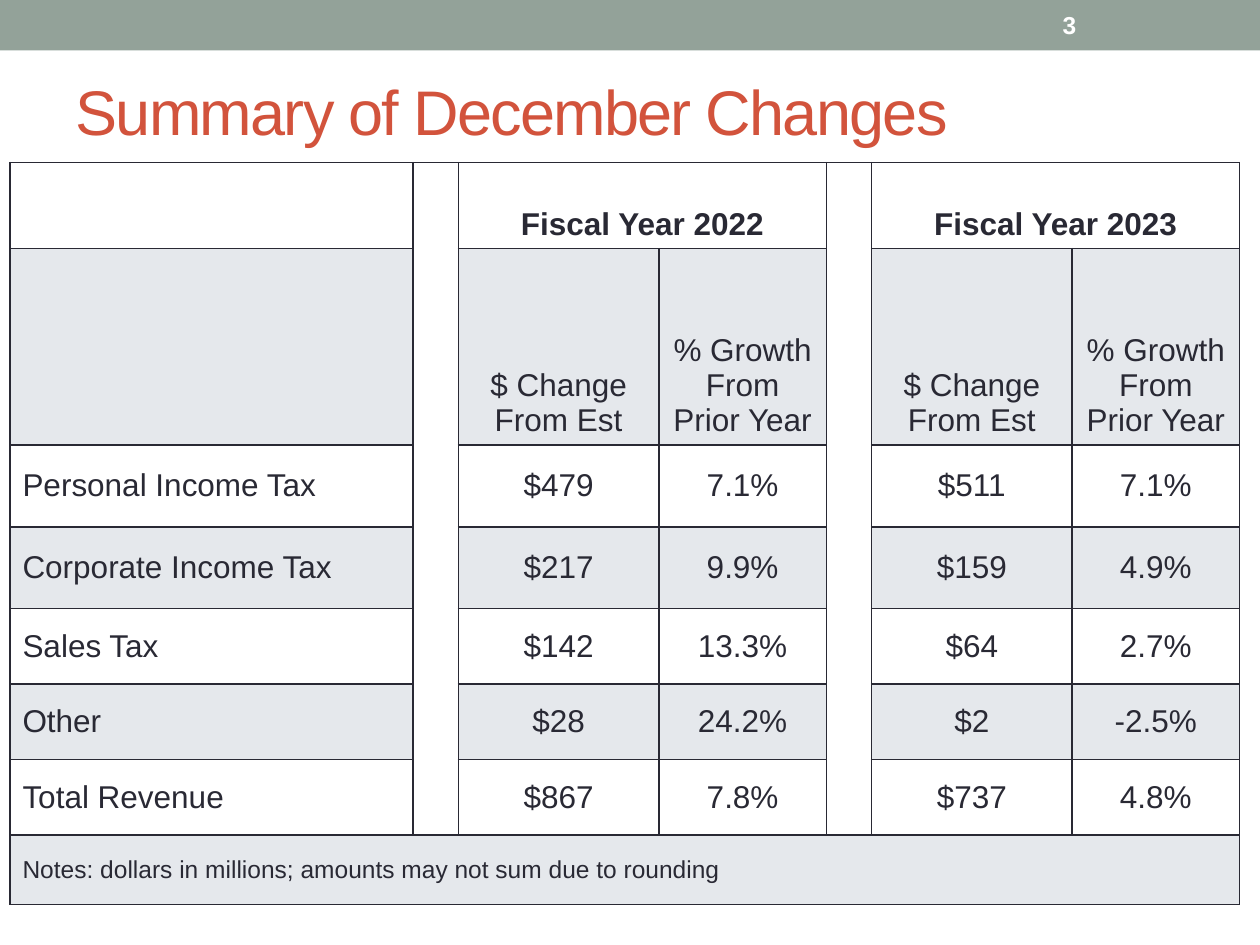
from dataclasses import dataclass

from lxml.etree import SubElement
from pptx import Presentation
from pptx.dml.color import RGBColor
from pptx.enum.shapes import MSO_SHAPE as Shape
from pptx.enum.text import MSO_ANCHOR as Anchor, MSO_AUTO_SIZE as AutoSize, PP_ALIGN as Align
from pptx.oxml import parse_xml
from pptx.oxml.ns import nsdecls, qn
from pptx.util import Cm, Pt


@dataclass(frozen=True)
class Theme:
    font: str = "Arial"
    ink: str = "292934"
    accent: str = "D2533C"
    band: str = "93A299"
    stripe: str = "808DA0"
    light: str = "FFFFFF"
    title_size: int = 36
    table_size: int = 18
    small_size: int = 14


THEME = Theme()
COLUMNS = [8.13, 0.91, 4.04, 3.38, 0.91, 4.04, 3.38]
ROWS = [1.73, 3.96, 1.65, 1.65, 1.52, 1.52, 1.52, 1.4]
SPACERS = (1, 4)
YEARS = {2: "Fiscal Year 2022", 5: "Fiscal Year 2023"}
MEASURES = ["$ Change From Est", "% Growth From Prior Year"]
REVENUES = [
    ["", *MEASURES, *MEASURES],
    ["Personal Income Tax", "$479", "7.1%", "$511", "7.1%"],
    ["Corporate Income Tax", "$217", "9.9%", "$159", "4.9%"],
    ["Sales Tax", "$142", "13.3%", "$64", "2.7%"],
    ["Other", "$28", "24.2%", "$2", "-2.5%"],
    ["Total Revenue", "$867", "7.8%", "$737", "4.8%"],
]
NOTE = "Notes: dollars in millions; amounts may not sum due to rounding"


def write(frame, text, size, color, bold=False, align=Align.LEFT):
    frame.text = text
    para = frame.paragraphs[0]
    para.alignment = align
    for target in (para, *para.runs):
        font = target.font
        font.name, font.size, font.bold = THEME.font, Pt(size), bold
        font.color.rgb = RGBColor.from_string(color)


def add_band(slide, width):
    band = slide.shapes.add_shape(Shape.RECTANGLE, 0, 0, width, Cm(1.02))
    band.shadow.inherit = False
    band.fill.solid()
    band.fill.fore_color.rgb = RGBColor.from_string(THEME.band)
    band.line.fill.background()


def add_page_number(slide, number):
    box = slide.shapes.add_textbox(Cm(21.17), Cm(0.05), Cm(2.96), Cm(0.91))
    box.text_frame.word_wrap = True
    box.text_frame.vertical_anchor = Anchor.MIDDLE
    write(box.text_frame, number, THEME.small_size, THEME.light, bold=True)


def set_title(slide, text):
    title = slide.shapes.title
    title.left, title.top, title.width, title.height = Cm(1.27), Cm(1.27), Cm(23.29), Cm(1.9)
    frame = title.text_frame
    frame.auto_size = AutoSize.NONE
    frame.vertical_anchor = Anchor.MIDDLE
    write(frame, text, THEME.title_size, THEME.accent)
    frame.paragraphs[0].runs[0].font._element.set("spc", "-100")


def style_cell(cell, striped):
    """Give the cell its fill and a thin line on all four sides."""
    if striped:
        cell.fill.solid()
        cell.fill.fore_color.rgb = RGBColor.from_string(THEME.stripe)
        color = cell.fill._xPr.find(".//" + qn("a:srgbClr"))
        SubElement(color, qn("a:alpha"), val="20000")
    else:
        cell.fill.background()
    properties = cell._tc.get_or_add_tcPr()
    for index, side in enumerate("LRTB"):
        properties.insert(index, parse_xml(
            f'<a:ln{side} {nsdecls("a")} w="12700"><a:solidFill>'
            f'<a:srgbClr val="{THEME.ink}"/></a:solidFill></a:ln{side}>'))


def fill_cell(cell, text, anchor=Anchor.MIDDLE, size=THEME.table_size, **style):
    cell.vertical_anchor = anchor
    write(cell.text_frame, text, size, THEME.ink, **style)


def add_revenue_table(slide):
    table = slide.shapes.add_table(len(ROWS), len(COLUMNS), Cm(0.2), Cm(3.28),
                                   Cm(sum(COLUMNS)), Cm(sum(ROWS))).table
    for column, width in zip(table.columns, COLUMNS):
        column.width = Cm(width)
    for row, height in zip(table.rows, ROWS):
        row.height = Cm(height)

    last_row, last_column = len(ROWS) - 1, len(COLUMNS) - 1
    for r in range(len(ROWS)):
        for c in range(len(COLUMNS)):
            spacer = c in SPACERS and r < last_row
            style_cell(table.cell(r, c), striped=r % 2 == 1 and not spacer)

    for c in SPACERS:
        table.cell(0, c).merge(table.cell(last_row - 1, c))
    for c, year in YEARS.items():
        table.cell(0, c).merge(table.cell(0, c + 1))
        fill_cell(table.cell(0, c), year, Anchor.BOTTOM, bold=True, align=Align.CENTER)

    data_columns = [c for c in range(len(COLUMNS)) if c not in SPACERS]
    for r, texts in enumerate(REVENUES, start=1):
        for c, text in zip(data_columns, texts):
            fill_cell(table.cell(r, c), text, Anchor.BOTTOM if r == 1 else Anchor.MIDDLE,
                      align=Align.CENTER if c else Align.LEFT)

    table.cell(last_row, 0).merge(table.cell(last_row, last_column))
    fill_cell(table.cell(last_row, 0), NOTE, size=THEME.small_size)


def main():
    deck = Presentation()
    deck.slide_width, deck.slide_height = Cm(25.4), Cm(19.05)
    slide = deck.slides.add_slide(deck.slide_layouts[5])
    add_band(slide, deck.slide_width)
    set_title(slide, "Summary of December Changes")
    add_page_number(slide, "3")
    add_revenue_table(slide)
    deck.save("out.pptx")


if __name__ == "__main__":
    main()
